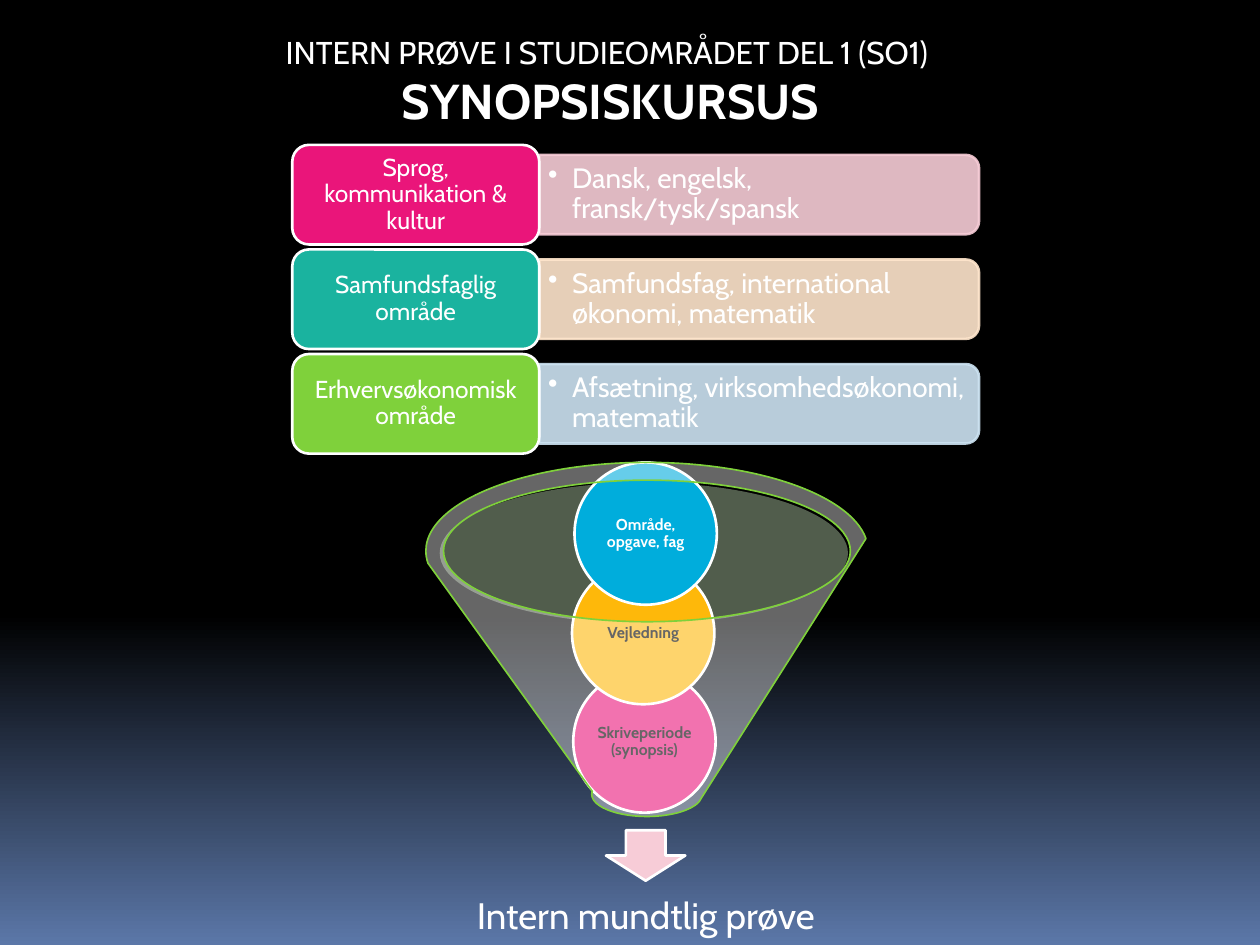
from dataclasses import dataclass
from pptx import Presentation
from pptx.dml.color import RGBColor
from pptx.enum.shapes import MSO_SHAPE
from pptx.enum.text import MSO_ANCHOR, MSO_AUTO_SIZE, PP_ALIGN
from pptx.oxml.ns import qn
from pptx.util import Inches, Pt
from lxml.etree import SubElement


@dataclass(frozen=True)
class Theme:
    font: str = "Cabin"
    white: str = "FFFFFF"
    black: str = "000000"
    blue: str = "5B77A8"
    pink: str = "EA157A"
    rose: str = "F7CCD7"
    teal: str = "1AB39F"
    sand: str = "FFE6CC"
    green: str = "7FD13B"
    sky: str = "CCE3F2"
    gold: str = "FEB80A"
    cyan: str = "00ADDC"
    mint: str = "CCE9BF"
    head: int = 28
    lead: int = 18
    goal: int = 21
    item: int = 16
    area: int = 14
    step: int = 9


T = Theme()


def paint(fill, color, alpha=100):
    fill.solid()
    fill.fore_color.rgb = RGBColor.from_string(color)
    if alpha < 100:
        node = fill._xPr.find(qn("a:solidFill"))[0]
        SubElement(node, qn("a:alpha"), val=str(alpha * 1000))


def add_shape(slide, kind, box, color, edge=T.white, width=1.5, alpha=100, fade=100):
    shape = slide.shapes.add_shape(kind, *map(Inches, box))
    shape.shadow.inherit = False
    paint(shape.fill, color, alpha)
    if edge:
        paint(shape.line.fill, edge, fade)
        shape.line.width = Pt(width)
    else:
        shape.line.fill.background()
    return shape


def style(para, size, color=T.white, bold=False, align=PP_ALIGN.CENTER):
    para.alignment = align
    font = para.font
    font.name, font.size, font.bold = T.font, Pt(size), bold
    font.color.rgb = RGBColor.from_string(color)


def write(shape, text, size, pad, color=T.white, bold=False, align=PP_ALIGN.CENTER):
    frame = shape.text_frame
    frame.word_wrap = True
    frame.vertical_anchor = MSO_ANCHOR.MIDDLE
    frame.margin_left = frame.margin_right = Inches(pad[0])
    frame.margin_top = frame.margin_bottom = Inches(pad[1])
    para = frame.paragraphs[0]
    para.text = text
    para.line_spacing = 0.9
    style(para, size, color, bold, align)
    return para


def add_label(slide, box, *args, **opts):
    return write(slide.shapes.add_textbox(*map(Inches, box)), *args, **opts)


def add_bullet(para):
    props = para._p.get_or_add_pPr()
    props.set("marL", str(Inches(0.19)))
    props.set("indent", str(-Inches(0.19)))
    SubElement(props, qn("a:buChar"), char="•")


def add_row(slide, top, area, color, items, tint):
    high, wide, left = 0.63, 3.49, 4.28
    mid = top + 0.79 / 2
    bar = (left + (wide - high) / 2, mid - wide / 2, high, wide)
    add_shape(slide, MSO_SHAPE.ROUND_2_SAME_RECTANGLE, bar, tint, tint,
              alpha=90, fade=90).rotation = 90
    box = (left, mid - 0.57 / 2, 3.45, 0.57)
    add_bullet(add_label(slide, box, items, T.item, (0.07, 0.03), align=PP_ALIGN.LEFT))
    card = add_shape(slide, MSO_SHAPE.ROUNDED_RECTANGLE, (2.32, top, 1.96, 0.79), color)
    write(card, area, T.area, (0.06, 0.03))


def add_step(slide, left, top, text, fill, color):
    ball = add_shape(slide, MSO_SHAPE.OVAL, (left, top, 1.13, 1.13), fill)
    write(ball, text, T.step, (0.01, 0.01), color, bold=True)


def add_funnel(slide):
    add_shape(slide, MSO_SHAPE.OVAL, (3.49, 3.83, 3.24, 1.12), T.mint, None, alpha=40)
    add_shape(slide, MSO_SHAPE.DOWN_ARROW, (4.81, 6.59, 0.63, 0.4), T.rose)
    add_label(slide, (3.62, 6.91, 3.01, 0.75), "Intern mundtlig prøve", T.goal, (0.16, 0.16))
    steps = [
        (4.55, 5.32, "Skriveperiode (synopsis)", T.pink, T.black),
        (4.54, 4.46, "Vejledning", T.gold, T.black),
        (4.56, 3.67, "Område, opgave, fag", T.cyan, T.white),
    ]
    for step in steps:
        add_step(slide, *step)
    add_shape(slide, MSO_SHAPE.FUNNEL, (3.38, 3.67, 3.51, 2.81), T.white, T.green, 0.94, 40)


def set_title(slide):
    title = slide.shapes.title
    title.left, title.top, title.width, title.height = map(Inches, (0.28, 0.21, 9.13, 0.88))
    frame = title.text_frame
    frame.text = "INTERN PRØVE I STUDIEOMRÅDET DEL 1 (SO1) \nSYNOPSISKURSUS"
    frame.auto_size = MSO_AUTO_SIZE.NONE
    frame.vertical_anchor = MSO_ANCHOR.TOP
    lead, head = frame.paragraphs
    style(lead, T.lead)
    style(head, T.head, bold=True)


def set_back(slide):
    fill = slide.background.fill
    fill.gradient()
    fill.gradient_angle = 270
    stops = ((0.65, T.black), (1, T.blue))
    for stop, (place, color) in zip(fill.gradient_stops, stops):
        stop.position = place
        stop.color.rgb = RGBColor.from_string(color)


def main():
    deck = Presentation()
    deck.slide_width, deck.slide_height = Inches(10), Inches(7.5)
    slide = deck.slides.add_slide(deck.slide_layouts[5])
    set_back(slide)
    set_title(slide)
    add_funnel(slide)
    rows = [
        ("Sprog, kommunikation & kultur", T.pink,
         "Dansk, engelsk, fransk/tysk/spansk", T.rose),
        ("Samfundsfaglig område", T.teal,
         "Samfundsfag, international økonomi, matematik", T.sand),
        ("Erhvervsøkonomisk område", T.green,
         "Afsætning, virksomhedsøkonomi, matematik", T.sky),
    ]
    for i, row in enumerate(rows):
        add_row(slide, 1.15 + 0.83 * i, *row)
    deck.save("out.pptx")


if __name__ == "__main__":
    main()
